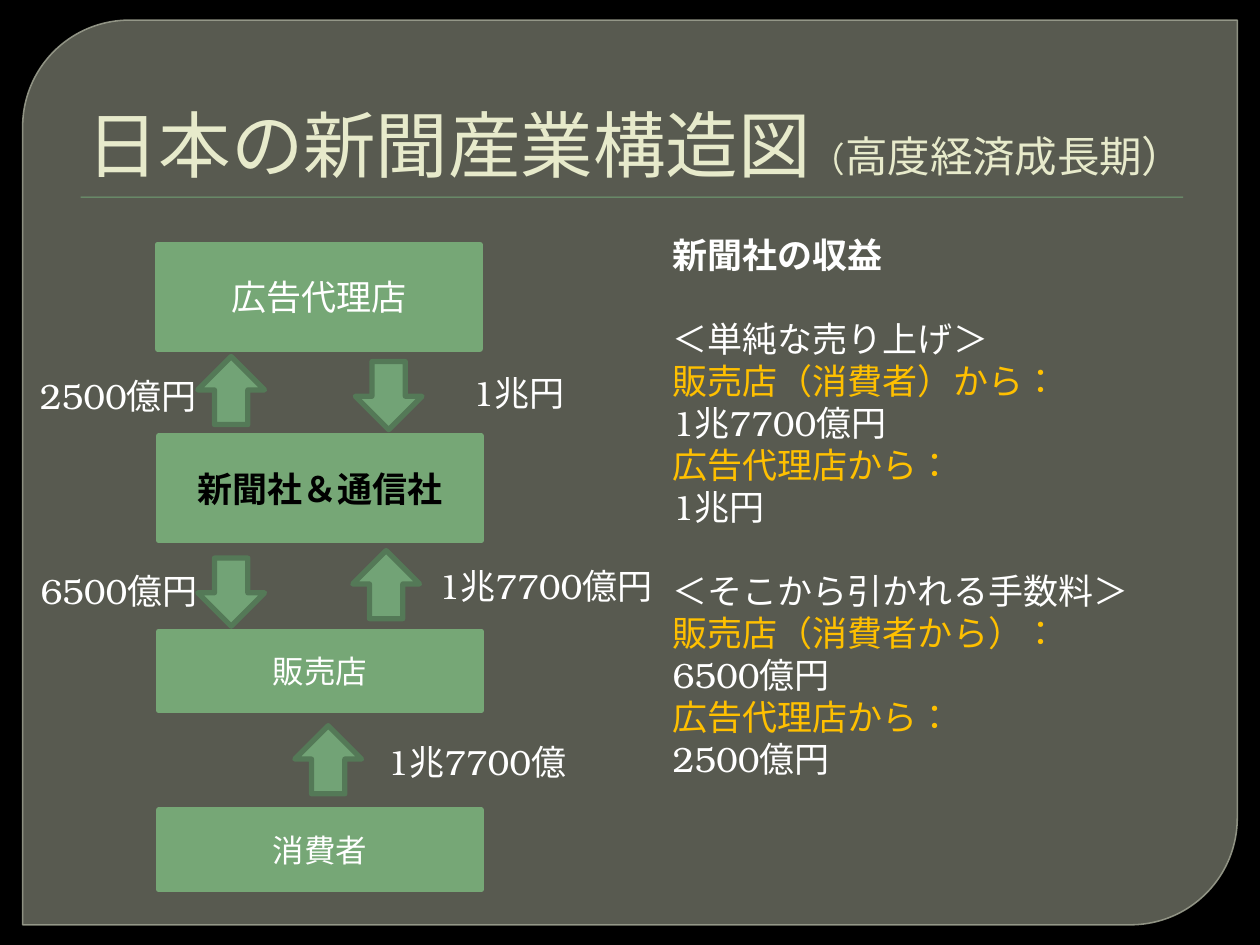
from dataclasses import dataclass
from lxml.etree import SubElement
from pptx import Presentation
from pptx.dml.color import RGBColor
from pptx.enum.lang import MSO_LANGUAGE_ID as LANG
from pptx.enum.shapes import MSO_SHAPE as SHAPE
from pptx.enum.text import MSO_ANCHOR as ANCHOR, PP_ALIGN as ALIGN
from pptx.oxml.ns import qn
from pptx.util import Pt

PX = 9144


@dataclass(frozen=True)
class Theme:
    font: str = "TeX Gyre Bonum"
    back: str = "000000"
    panel: str = "888B7B"
    edge: str = "9DA090"
    title: str = "E7EACB"
    green: str = "72A376"
    box: str = "76A776"
    rim: str = "547957"
    white: str = "FFFFFF"
    black: str = "000000"
    gold: str = "FFC000"
    head: float = 41.4
    paren: float = 19.8
    era: float = 24.3
    text: int = 20
    small: int = 18
    gap: int = 24
    line: int = 3


T = Theme()


def rgb(code):
    return RGBColor.from_string(code)


def fade(fill, share):
    tint = next(fill._xPr.iter(qn("a:srgbClr")))
    SubElement(tint, qn("a:alpha")).set("val", str(share * 1000))


def draw(slide, kind, area, color, rim=None, width=T.line):
    shape = slide.shapes.add_shape(kind, *(n * PX for n in area))
    shape.shadow.inherit = False
    shape.fill.solid()
    shape.fill.fore_color.rgb = rgb(color)
    if rim:
        shape.line.color.rgb = rgb(rim)
        shape.line.width = Pt(width)
    else:
        shape.line.fill.background()
    return shape


def add_run(para, text, size, color, bold=False):
    run = para.add_run()
    run.text = text
    font = run.font
    font.name, font.size, font.bold = T.font, Pt(size), bold
    font.color.rgb = rgb(color)
    font.language_id = LANG.JAPANESE


def set_frame(shape, anchor, align):
    frame = shape.text_frame
    frame.word_wrap = True
    frame.vertical_anchor = anchor
    frame.paragraphs[0].alignment = align
    return frame


def add_text(slide, area, anchor, align):
    return set_frame(slide.shapes.add_textbox(*(n * PX for n in area)), anchor, align)


def add_panel(slide, x, y, w, h):
    panel = draw(slide, SHAPE.ROUND_2_DIAG_RECTANGLE, (x, y, w, h), T.panel, T.edge, 0.87)
    panel.adjustments[0] = 0.118
    panel.adjustments[1] = 0
    fade(panel.fill, 65)
    fade(panel.line.fill, 88)


def add_title(slide, x, y, w, h):
    draw(slide, SHAPE.RECTANGLE, (x + 14, y + h + 3, w - 25, 1), T.green)
    para = add_text(slide, (x, y, w, h), ANCHOR.BOTTOM, ALIGN.RIGHT).paragraphs[0]
    for text, size in (
        ("日本の新聞産業構造図", T.head),
        ("（", T.paren),
        ("高度経済成長期）", T.era),
    ):
        add_run(para, text, size, T.title)


def add_flow(slide, x, y):
    for text, dx, dy, h, size, color, bold in (
        ("広告代理店", 0, 0, 83, T.text, T.white, False),
        ("新聞社＆通信社", 1, 152, 83, T.text, T.black, True),
        ("販売店", 1, 307, 63, T.small, T.white, False),
        ("消費者", 1, 449, 63, T.small, T.white, False),
    ):
        box = draw(slide, SHAPE.RECTANGLE, (x + dx, y + dy, 256, h), T.box, T.box)
        para = set_frame(box, ANCHOR.MIDDLE, ALIGN.CENTER).paragraphs[0]
        add_run(para, text, size, color, bold)

    for kind, dx, dy in (
        (SHAPE.UP_ARROW, 32, 89),
        (SHAPE.DOWN_ARROW, 157, 93),
        (SHAPE.DOWN_ARROW, 32, 249),
        (SHAPE.UP_ARROW, 155, 243),
        (SHAPE.UP_ARROW, 109, 382),
    ):
        draw(slide, kind, (x + dx, y + dy, 53, 54), T.green, T.rim)

    for text, dx, dy, w, h in (
        ("2500億円", -125, 91, 188, 57),
        ("1兆円", 208, 85, 157, 65),
        ("6500億円", -105, 250, 149, 50),
        ("1兆7700億円", 210, 243, 196, 56),
        ("1兆7700億", 155, 385, 197, 50),
    ):
        frame = add_text(slide, (x + dx, y + dy, w, h), ANCHOR.MIDDLE, ALIGN.CENTER)
        add_run(frame.paragraphs[0], text, T.text, T.white)


def add_notes(slide, x, y, w, h):
    frame = add_text(slide, (x, y, w, h), ANCHOR.TOP, ALIGN.LEFT)
    add_run(frame.paragraphs[0], "新聞社の収益", T.text, T.white, True)
    for head, items in (
        ("＜単純な売り上げ＞", (
            ("販売店（消費者）から：", "1兆7700億円"),
            ("広告代理店から：", "1兆円"),
        )),
        ("＜そこから引かれる手数料＞", (
            ("販売店（消費者から）：", "6500億円"),
            ("広告代理店から：", "2500億円"),
        )),
    ):
        para = frame.add_paragraph()
        para.space_before = Pt(T.gap)
        add_run(para, head, T.text, T.white)
        for label, value in items:
            add_run(frame.add_paragraph(), label, T.text, T.gold)
            add_run(frame.add_paragraph(), value, T.text, T.white)


def main():
    deck = Presentation()
    deck.slide_width, deck.slide_height = 1000 * PX, 750 * PX
    slide = deck.slides.add_slide(deck.slide_layouts[6])
    slide.background.fill.solid()
    slide.background.fill.fore_color.rgb = rgb(T.back)
    add_panel(slide, 18, 16, 964, 718)
    add_title(slide, 50, 28, 900, 125)
    add_notes(slide, 524, 180, 426, 495)
    add_flow(slide, 125, 194)
    deck.save("out.pptx")


if __name__ == "__main__":
    main()
